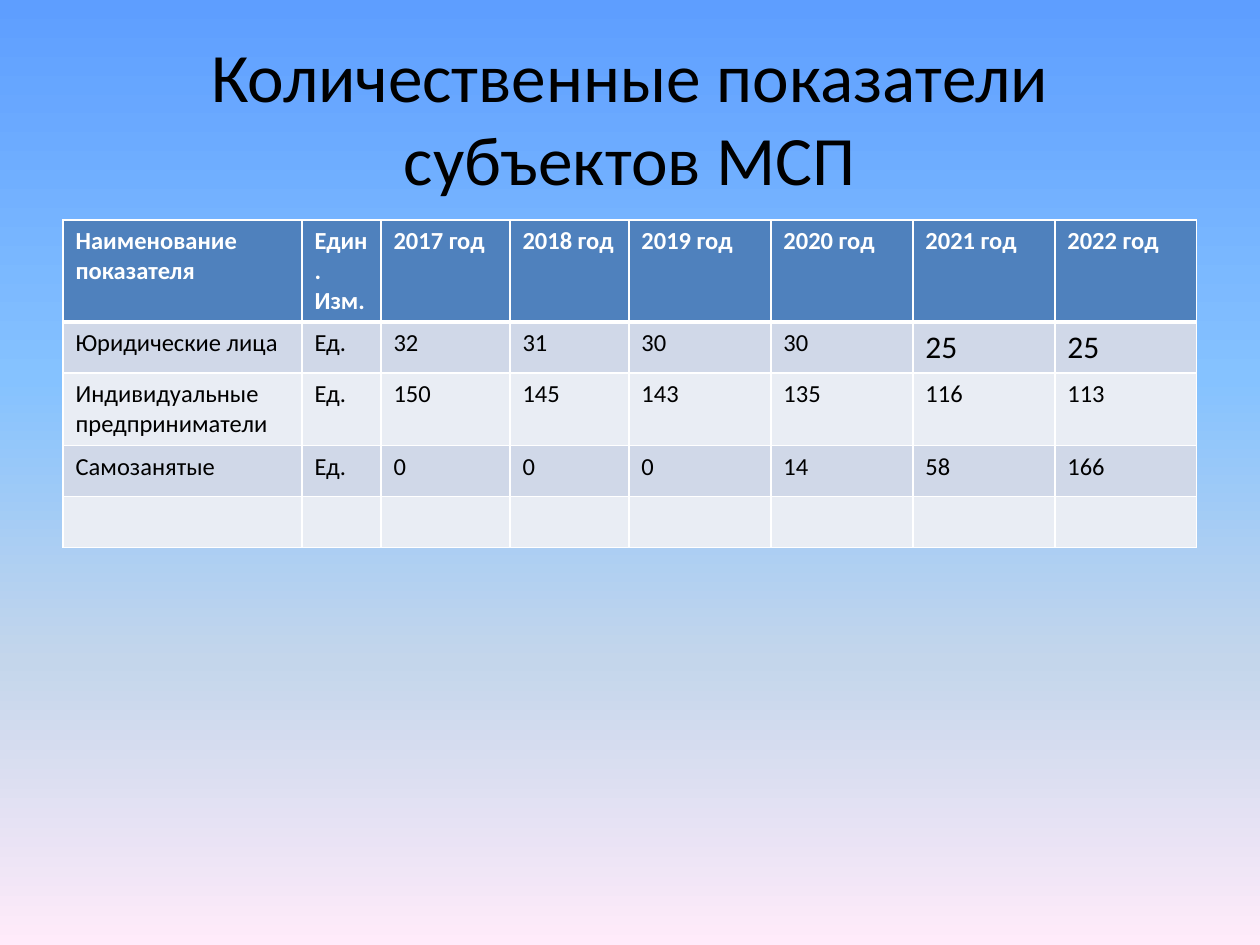
from lxml.etree import SubElement as Sub
from pptx import Presentation as Deck
from pptx.dml.color import RGBColor as Rgb
from pptx.enum.text import MSO_ANCHOR as Anchor, PP_ALIGN as Align
from pptx.oxml.ns import qn
from pptx.util import Emu, Pt

SCALE = 914400 / 126
FONT = "Calibri"
HUES = {
    "text": "000000", "white": "FFFFFF", "head": "4F81BD",
    "odd": "D0D8E8", "even": "E9EDF4",
}
SKY = [(0, "5E9EFF"), (40, "85C2FF"), (70, "C4D6EB"), (100, "FFEBFA")]
COLS = [239, 79, 129, 119] + [142] * 4
ROW = 51
DATA = [
    ["Наименование показателя", "Един. Изм."]
    + [f"{year} год" for year in range(2017, 2023)],
    ["Юридические лица", "Ед.", "32", "31", "30", "30", "25", "25"],
    ["Индивидуальные предприниматели", "Ед.",
     "150", "145", "143", "135", "116", "113"],
    ["Самозанятые", "Ед.", "0", "0", "0", "14", "58", "166"],
    [""] * 8,
]
LARGE = {(1, 6), (1, 7)}  # cells set in bigger type


def px(num):
    return Emu(round(num * SCALE))


def style(para, size, hue, bold=False):
    for run in para.runs:
        font = run.font
        font.name, font.size, font.bold = FONT, Pt(size), bold
        font.color.rgb = Rgb.from_string(HUES[hue])


def paint_back(slide):
    fill = slide.background.fill
    fill.gradient()
    fill.gradient_angle = 270
    stops = slide.element.find(".//" + qn("a:gsLst"))
    stops.clear()
    for pos, hue in SKY:
        stop = Sub(stops, qn("a:gs"), pos=str(pos * 1000))
        Sub(stop, qn("a:srgbClr"), val=hue)


def add_title(slide, text):
    title = slide.shapes.title
    title.left, title.top = px(63), px(38)
    title.width, title.height = px(1134), px(157)
    frame = title.text_frame
    frame.text = text
    frame.word_wrap = True
    frame.vertical_anchor = Anchor.MIDDLE
    para = frame.paragraphs[0]
    para.alignment = Align.CENTER
    style(para, 39.6, "text")


def add_edges(cell, top, bottom):
    props = cell._tc.get_or_add_tcPr()
    for side, width in zip("LRTB", (1, 1, top, bottom)):
        line = Sub(props, qn(f"a:ln{side}"), w=str(Pt(width)))
        solid = Sub(line, qn("a:solidFill"))
        Sub(solid, qn("a:srgbClr"), val=HUES["white"])


def fill_cell(cell, text, row, col):
    head = row == 0
    # Edges go before the fill; a thick rule parts header and body
    add_edges(cell, 3 if row == 1 else 1, 3 if head else 1)
    hue = "head" if head else "odd" if row % 2 else "even"
    cell.fill.solid()
    cell.fill.fore_color.rgb = Rgb.from_string(HUES[hue])
    if text:
        cell.text_frame.text = text
        size = 18 if (row, col) in LARGE else 14
        style(cell.text_frame.paragraphs[0], size,
              "white" if head else "text", head)


def add_grid(slide):
    grid = slide.shapes.add_table(
        len(DATA), len(COLS), px(63), px(220),
        px(sum(COLS)), px(ROW * len(DATA))).table
    for col, width in zip(grid.columns, COLS):
        col.width = px(width)
    for row, texts in enumerate(DATA):
        grid.rows[row].height = px(ROW)
        for col, text in enumerate(texts):
            fill_cell(grid.cell(row, col), text, row, col)


def main():
    deck = Deck()
    deck.slide_width, deck.slide_height = px(1260), px(945)
    slide = deck.slides.add_slide(deck.slide_layouts[5])
    paint_back(slide)
    add_title(slide, "Количественные показатели субъектов МСП")
    add_grid(slide)
    deck.save("out.pptx")


if __name__ == "__main__":
    main()
